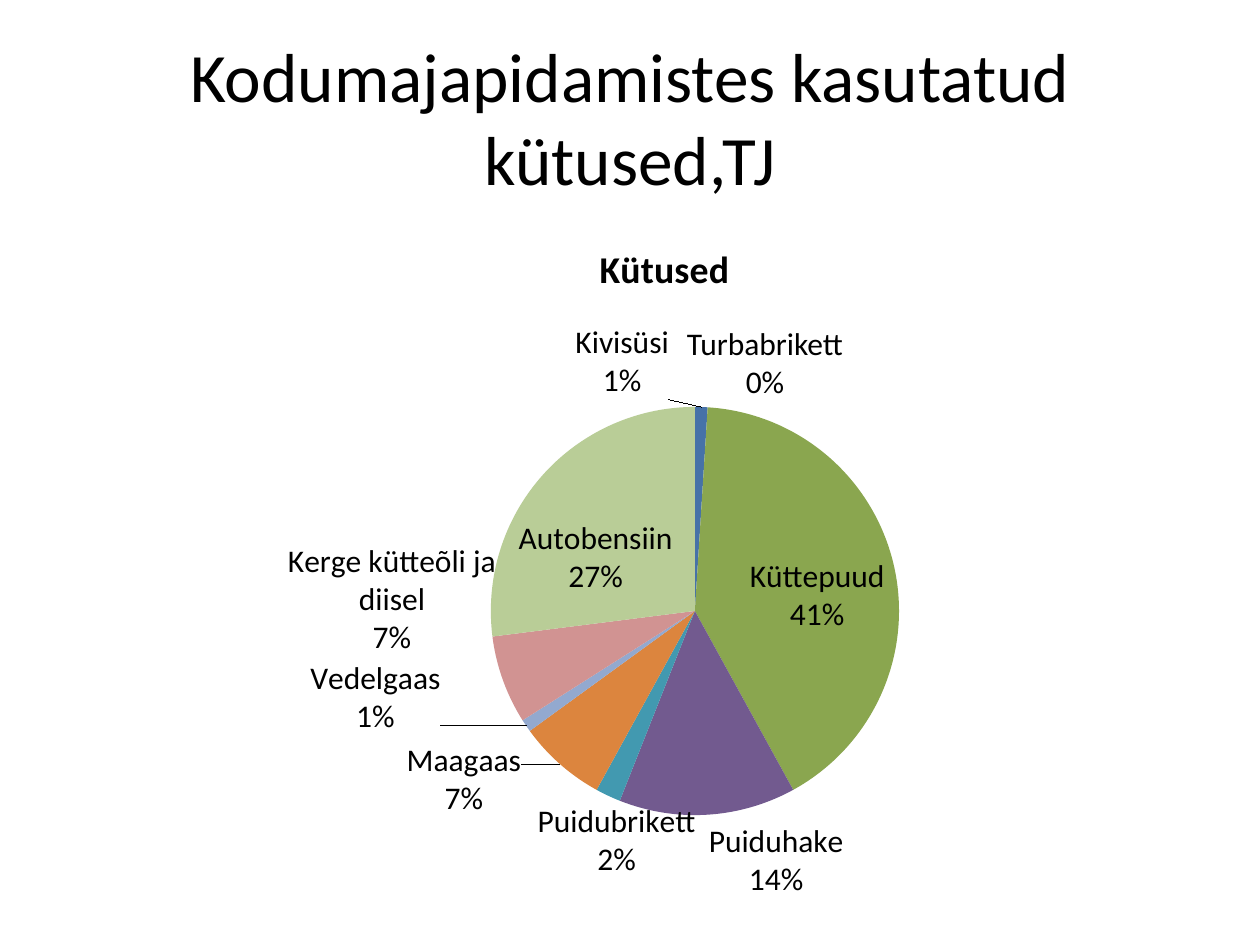
"""Build a slide with a pie chart of household fuels."""
from dataclasses import dataclass

from pptx import Presentation
from pptx.chart.data import CategoryChartData as Data
from pptx.dml.color import RGBColor as Rgb
from pptx.enum.chart import XL_CHART_TYPE as Kind, XL_LABEL_POSITION as Pos
from pptx.enum.text import MSO_ANCHOR as Anchor, MSO_AUTO_SIZE as Fit, PP_ALIGN as Align
from pptx.oxml import parse_xml
from pptx.oxml.ns import nsdecls, qn
from pptx.util import Emu, Pt

PX = 914400 // 126
HEAD = "Kodumajapidamistes kasutatud kütused,TJ"
NAME = "Kütused"
FUELS = [
    ("Kivisüsi", 1, "4672A8", "outEnd", -0.07, 0),
    ("Turbabrikett", 0, "AB4744", None, 0, 0),
    ("Küttepuud", 41, "8AA64F", "ctr", 0.02, 0.01),
    ("Puiduhake", 14, "725A8F", "outEnd", 0.06, 0),
    ("Puidubrikett", 2, "4299B0", "outEnd", 0.08, 0),
    ("Maagaas", 7, "DC853E", "outEnd", -0.03, -0.04),
    ("Vedelgaas", 1, "93A9CF", "outEnd", -0.07, -0.1),
    ("Kerge kütteõli ja diisel", 7, "D19392", "outEnd", 0, -0.2),
    ("Autobensiin", 27, "B9CD97", "ctr", -0.02, 0.02),
]


@dataclass(frozen=True)
class Theme:
    font: str = "Calibri"
    ink: str = "000000"
    head: float = 39.6
    title: float = 21.6
    label: float = 18


THEME = Theme()


def px(*nums):
    return [Emu(n * PX) for n in nums]


def style(font, size, bold=False):
    font.name, font.size, font.bold = THEME.font, Pt(size), bold
    font.color.rgb = Rgb.from_string(THEME.ink)


def layout(**parts):
    body = "".join(f'<c:{key} val="{val}"/>' for key, val in parts.items())
    return f'<c:layout {nsdecls("c")}><c:manualLayout>{body}</c:manualLayout></c:layout>'


def place(node, spot, **parts):
    for old in node.findall(qn("c:layout")):
        node.remove(old)
    node.insert(spot, parse_xml(layout(**parts)))


def label(idx, pos, x, y):
    flags = {"LegendKey": 0, "Val": 0, "CatName": 1, "SerName": 0, "Percent": 1, "BubbleSize": 0}
    shows = "".join(f'<c:show{key} val="{val}"/>' for key, val in flags.items())
    body = (
        f'{layout(x=x, y=y)}<c:dLblPos val="{pos}"/>{shows}<c:separator>\n</c:separator>'
        if pos else '<c:delete val="1"/>'
    )
    return parse_xml(f'<c:dLbl {nsdecls("c")}><c:idx val="{idx}"/>{body}</c:dLbl>')


def add_head(slide):
    box = slide.shapes.title
    box.left, box.top, box.width, box.height = px(63, 38, 1134, 157)
    frame = box.text_frame
    frame.text = HEAD
    frame.auto_size, frame.vertical_anchor = Fit.NONE, Anchor.MIDDLE
    para = frame.paragraphs[0]
    para.alignment = Align.CENTER
    style(para.font, THEME.head)


def add_pie(slide):
    data = Data()
    data.categories = [fuel[0] for fuel in FUELS]
    data.add_series(NAME, [fuel[1] for fuel in FUELS])
    chart = slide.shapes.add_chart(Kind.PIE, *px(94, 214, 1134, 703), data).chart
    chart.has_legend = False
    style(chart.font, THEME.label)

    chart.has_title = True
    title = chart.chart_title
    title.text_frame.text = NAME
    style(title.text_frame.paragraphs[0].font, THEME.title, True)
    place(title._element, 1, xMode="edge", yMode="edge", x=0.44, y=0.03)

    plot = chart.plots[0]
    plot.vary_by_categories = True
    place(plot._element.getparent(), 0, layoutTarget="inner", xMode="edge",
          yMode="edge", x=0.35, y=0.27, w=0.36, h=0.59)

    pie = plot.series[0]
    tags = pie.data_labels
    tags.show_value, tags.show_category_name, tags.show_percentage = False, True, True
    tags.position = Pos.OUTSIDE_END
    style(tags.font, THEME.label)
    for idx, (_, _, color, pos, x, y) in enumerate(FUELS):
        fill = pie.points[idx].format.fill
        fill.solid()
        fill.fore_color.rgb = Rgb.from_string(color)
        tags._element.insert(idx, label(idx, pos, x, y))


def add_zero(slide):
    fuel, share = FUELS[1][:2]
    frame = slide.shapes.add_textbox(*px(675, 324, 180, 76)).text_frame
    frame.word_wrap = True
    frame.margin_left = frame.margin_right = frame.margin_top = frame.margin_bottom = 0
    frame.text = f"{fuel}\n{share}%"
    for para in frame.paragraphs:
        para.alignment = Align.CENTER
        style(para.font, THEME.label)


def main():
    deck = Presentation()
    deck.slide_width, deck.slide_height = px(1260, 945)
    slide = deck.slides.add_slide(deck.slide_layouts[5])
    add_head(slide)
    add_pie(slide)
    add_zero(slide)
    deck.save("out.pptx")


if __name__ == "__main__":
    main()
